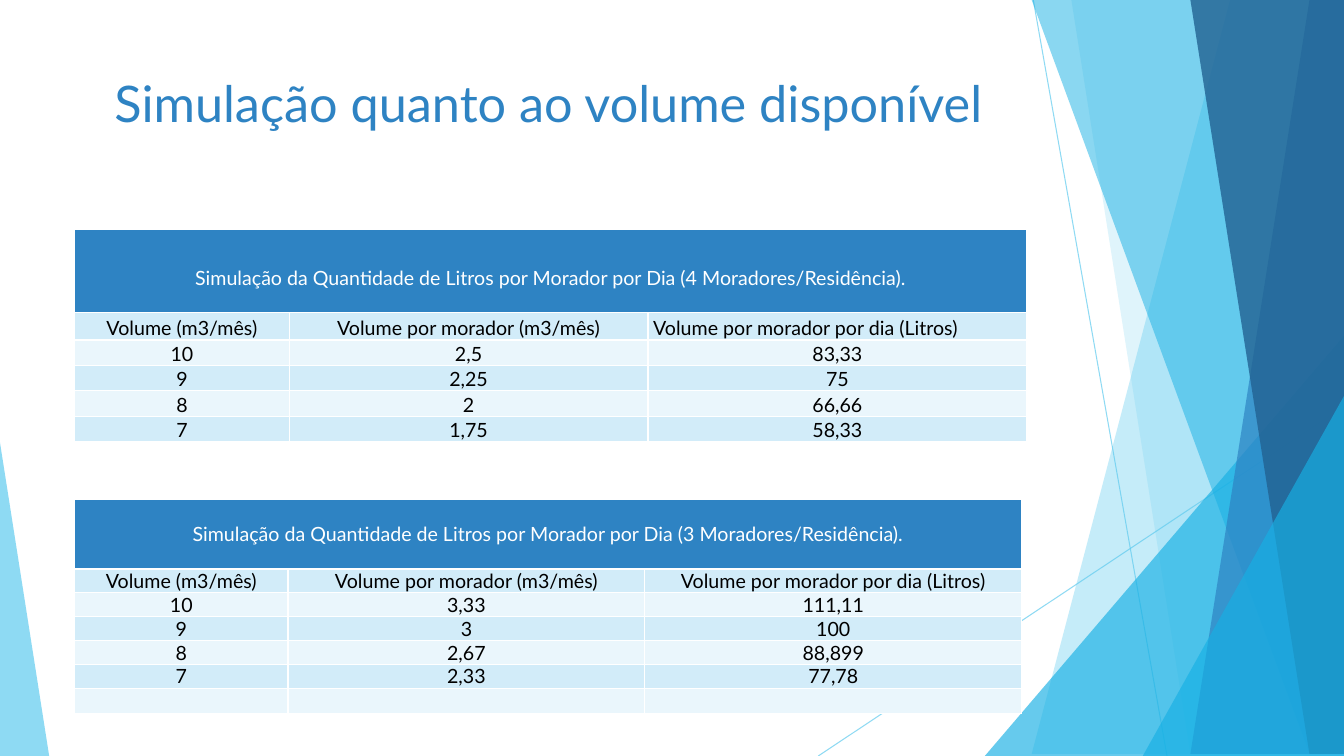
"""Build a slide with two tables simulating the water volume per resident."""
from lxml import etree
from pptx import Presentation
from pptx.dml.color import RGBColor
from pptx.enum.shapes import MSO_CONNECTOR, MSO_SHAPE
from pptx.enum.text import MSO_ANCHOR, PP_ALIGN
from pptx.oxml.ns import qn
from pptx.util import Cm, Pt

STRAIGHT = MSO_CONNECTOR.STRAIGHT
TRIANGLE = MSO_SHAPE.ISOSCELES_TRIANGLE
TOP, BOTTOM = MSO_ANCHOR.TOP, MSO_ANCHOR.BOTTOM
LEFT, CENTER = PP_ALIGN.LEFT, PP_ALIGN.CENTER
WIDTH, HEIGHT = 33.87, 19.05
SKY, CYAN, BLUE, NAVY = "5FCBEF", "17B0E4", "2E83C3", "226292"
BANDS = ["EAF6FC", "D2ECF9"]
WHITE, BLACK = "FFFFFF", "000000"


def paint(fill, color, opacity=100):
    fill.solid()
    fill.fore_color.rgb = RGBColor.from_string(color)
    if opacity < 100:
        clr = fill._xPr.find(".//" + qn("a:srgbClr"))
        etree.SubElement(clr, qn("a:alpha"), val=str(opacity * 1000))


def write(tf, text, size=14, color=BLACK, align=CENTER, anchor=BOTTOM):
    tf.word_wrap = True
    tf.vertical_anchor = anchor
    p = tf.paragraphs[0]
    p.alignment = align
    if not text:
        etree.SubElement(p._p, qn("a:endParaRPr"), sz=str(size * 100))
        return
    r = p.add_run()
    r.text = text
    r.font.name = "Lato"
    r.font.size = Pt(size)
    r.font.bold = False
    paint(r.font.fill, color)


prs = Presentation()
prs.slide_width, prs.slide_height = Cm(WIDTH), Cm(HEIGHT)
s = prs.slides.add_slide(prs.slide_layouts[5])

for ends in [(26.04, 0, 29.41, HEIGHT), (WIDTH, 10.24, 20.62, HEIGHT)]:
    line = s.shapes.add_connector(STRAIGHT, *map(Cm, ends))
    line.line.width = Pt(0.75)
    paint(line.line.fill, SKY, 70)
    etree.SubElement(line._element.spPr, qn("a:effectLst"))

# Bands give their left edge as (top x, bottom x); triangles give a box and the apex.
facets = [
    ((31.19, 25.5), SKY, 36),
    ((26.67, 30.05), SKY, 20),
    ((24.82, 8.46, 9.05, 10.59, 1), CYAN, 66),
    ((25.93, 32.79), CYAN, 50),
    ((33.1, 30.28), BLUE, 70),
    ((30.38, 33.48), NAVY, 80),
    ((28.8, 9.98, 5.07, 9.07, 1), CYAN, 66),
    ((0, 11.15, 1.24, 7.9, 0), SKY, 70),
]
for geometry, color, opacity in facets:
    if len(geometry) == 2:
        top_x, bottom_x = geometry
        outline = s.shapes.build_freeform(top_x, 0, scale=Cm(1))
        outline.add_line_segments([(WIDTH, 0), (WIDTH, HEIGHT), (bottom_x, HEIGHT)])
        sp = outline.convert_to_shape()
    else:
        *box, apex = geometry
        sp = s.shapes.add_shape(TRIANGLE, *map(Cm, box))
        sp.adjustments[0] = apex
    sp.shadow.inherit = False
    paint(sp.fill, color, opacity)
    sp.line.fill.background()

title = s.shapes.title
title.left, title.top, title.width, title.height = map(Cm, (1.88, 1.7, 23.88, 3.66))
write(title.text_frame, "Simulação quanto ao volume disponível",
      size=36, color=BLUE, anchor=TOP)

headings = ["Volume (m3/mês)", "Volume por morador (m3/mês)",
            "Volume por morador por dia (Litros)"]
tables = [
    (3, 12.59, [5.38, 8.99, 9.5], [1.75] + [0.6] * 5 + [0.63], CENTER,
     [["10", "3,33", "111,11"], ["9", "3", "100"], ["8", "2,67", "88,899"],
      ["7", "2,33", "77,78"], ["", "", ""]]),
    (4, 5.78, [5.41, 9.04, 9.55], [2.1, 0.69] + [0.64] * 4, LEFT,
     [["10", "2,5", "83,33"], ["9", "2,25", "75"], ["8", "2", "66,66"],
      ["7", "1,75", "58,33"]]),
]
for residents, top, widths, heights, last_align, values in tables:
    caption = ("Simulação da Quantidade de Litros por Morador por Dia "
               f"({residents} Moradores/Residência).")
    frame = s.shapes.add_table(len(heights), len(widths), Cm(1.88), Cm(top),
                               Cm(sum(widths)), Cm(sum(heights)))
    table = frame.table
    for column, width in zip(table.columns, widths):
        column.width = Cm(width)
    for row, height in zip(table.rows, heights):
        row.height = Cm(height)

    banner = table.cell(0, 0)
    banner.merge(table.cell(0, 2))
    banner.margin_top, banner.margin_bottom = 0, Cm(0.59)
    paint(banner.fill, BLUE)
    write(banner.text_frame, caption, color=WHITE)
    banner.vertical_anchor = BOTTOM

    for i, texts in enumerate([headings] + values, start=1):
        for j, text in enumerate(texts):
            cell = table.cell(i, j)
            cell.margin_left = cell.margin_right = Cm(0.13)
            cell.margin_top = cell.margin_bottom = 0
            paint(cell.fill, BANDS[i % 2])
            write(cell.text_frame, text,
                  align=last_align if (i, j) == (1, 2) else CENTER)
            cell.vertical_anchor = BOTTOM

prs.save("out.pptx")
